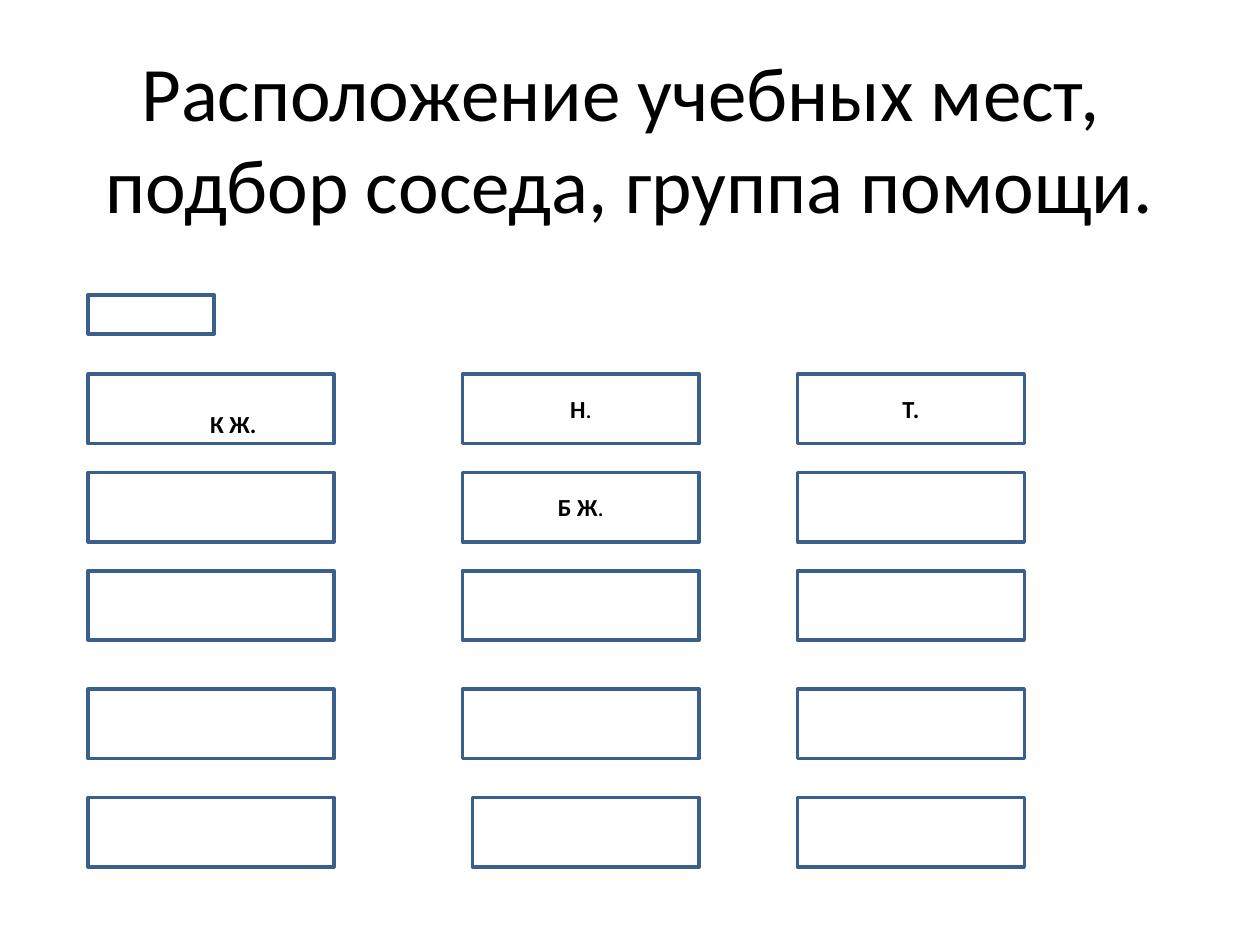
from dataclasses import dataclass

from pptx import Presentation
from pptx.dml.color import RGBColor
from pptx.enum.shapes import MSO_SHAPE
from pptx.enum.text import MSO_ANCHOR, PP_ALIGN
from pptx.util import Emu, Pt

RECTANGLE = MSO_SHAPE.RECTANGLE
MIDDLE = MSO_ANCHOR.MIDDLE
CENTER = PP_ALIGN.CENTER
EMU_PER_PX = 9144
FONT = "Calibri"
BLACK, WHITE, BLUE = "000000", "FFFFFF", "3A5F8C"
DESK_HEIGHT = 55
ROW_TOPS = (297, 375, 453, 547, 633)
COLUMNS = ((70, 195), (367, 188), (633, 180))
NARROW_DESK = (4, 1)
NARROW_LEFT, NARROW_WIDTH = 375, 180


@dataclass(frozen=True)
class Span:
    text: str
    size: int = 14
    bold: bool = True


@dataclass(frozen=True)
class Label:
    spans: tuple[Span, ...] = ()
    left_inset: int = 10
    top_inset: int = 5
    bottom_inset: int = 5


LABELS = {
    (0, 0): Label((Span("К Ж."),), left_inset=45, top_inset=24, bottom_inset=0),
    (0, 1): Label((Span("Н"), Span(".", bold=False))),
    (0, 2): Label((Span("Т."),)),
    (1, 1): Label((Span("Б Ж"), Span(".", bold=False))),
}
TITLE_LINES = ("Расположение учебных мест, ", "подбор соседа, группа помощи.")


def px(length: int) -> Emu:
    return Emu(length * EMU_PER_PX)


def color(value: str) -> RGBColor:
    return RGBColor.from_string(value)


def add_span(para, span: Span) -> None:
    run = para.add_run()
    run.text = span.text
    run.font.name = FONT
    run.font.size = Pt(span.size)
    run.font.bold = span.bold
    run.font.color.rgb = color(BLACK)


def add_title(page, lines: tuple[str, ...]) -> None:
    box = page.shapes.add_textbox(px(50), px(30), px(900), px(157))
    frame = box.text_frame
    frame.word_wrap = True
    frame.vertical_anchor = MIDDLE
    para = frame.paragraphs[0]
    para.alignment = CENTER
    for index, line in enumerate(lines):
        if index:
            para.add_line_break()
        add_span(para, Span(line, size=44, bold=False))


def add_desk(page, left: int, top: int, width: int, height: int, label: Label) -> None:
    desk = page.shapes.add_shape(RECTANGLE, px(left), px(top), px(width), px(height))
    desk.shadow.inherit = False
    desk.fill.solid()
    desk.fill.fore_color.rgb = color(WHITE)
    desk.line.color.rgb = color(BLUE)
    desk.line.width = Pt(2)
    frame = desk.text_frame
    frame.word_wrap = True
    frame.vertical_anchor = MIDDLE
    frame.margin_left = px(label.left_inset)
    frame.margin_top = px(label.top_inset)
    frame.margin_bottom = px(label.bottom_inset)
    para = frame.paragraphs[0]
    para.alignment = CENTER
    for span in label.spans:
        add_span(para, span)


def main() -> None:
    """Draw the classroom seating plan."""
    deck = Presentation()
    deck.slide_width, deck.slide_height = px(1000), px(750)
    page = deck.slides.add_slide(deck.slide_layouts[6])
    add_title(page, TITLE_LINES)
    add_desk(page, 70, 234, 100, 31, Label())
    for row, top in enumerate(ROW_TOPS):
        for column, (left, width) in enumerate(COLUMNS):
            if (row, column) == NARROW_DESK:
                left, width = NARROW_LEFT, NARROW_WIDTH
            label = LABELS.get((row, column), Label())
            add_desk(page, left, top, width, DESK_HEIGHT, label)
    deck.save("out.pptx")


if __name__ == "__main__":
    main()
